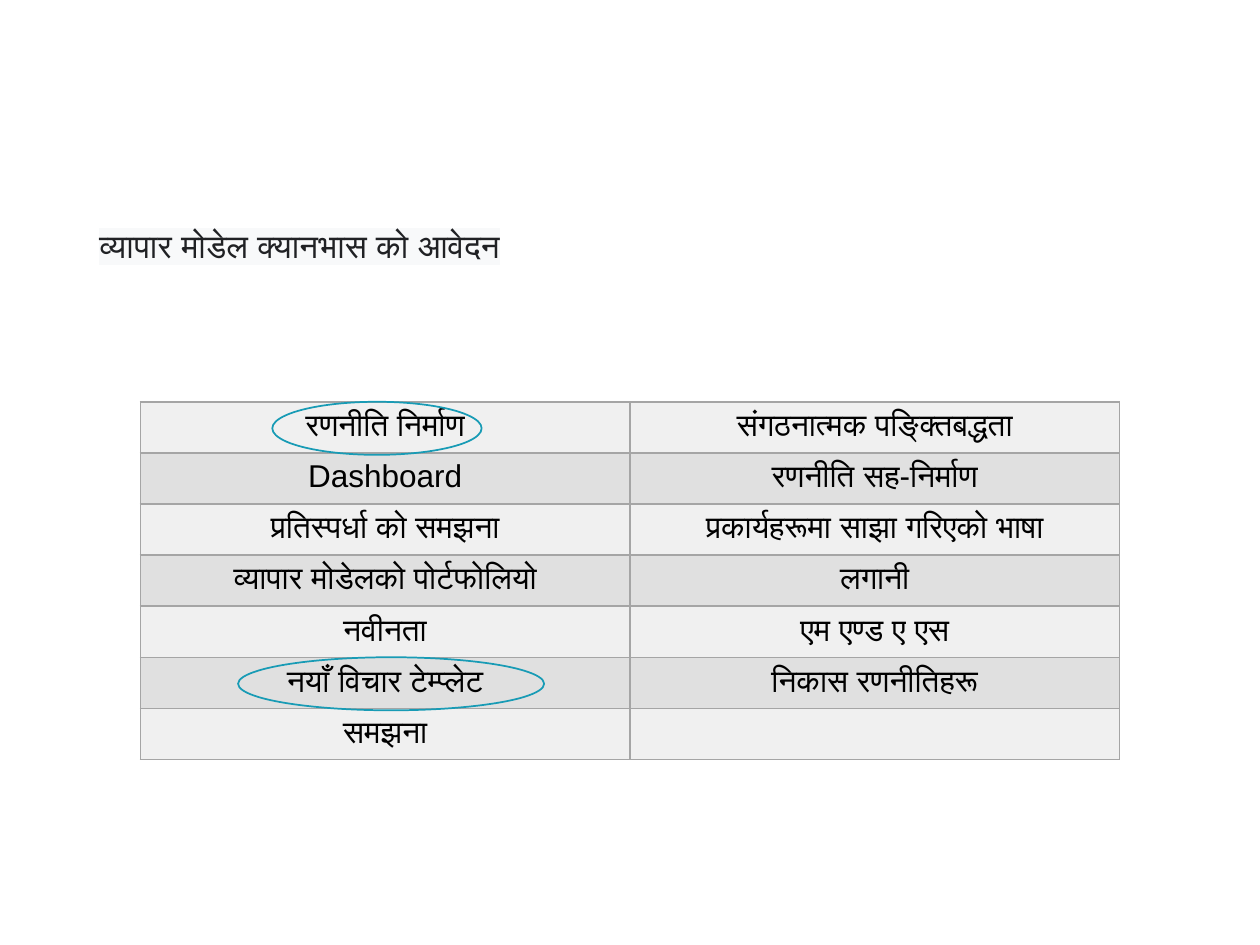
import pptx
import pptx.dml.color
import pptx.enum.shapes
import pptx.enum.text
import pptx.oxml
import pptx.oxml.ns
import pptx.util
from pptx.util import Cm

FONT = "Arial"
NS = pptx.oxml.ns.nsdecls("a")
ROWS = [
    ("रणनीति निर्माण", "संगठनात्मक पङ्क्तिबद्धता"),
    ("Dashboard", "रणनीति सह-निर्माण"),
    ("प्रतिस्पर्धा को समझना", "प्रकार्यहरूमा साझा गरिएको भाषा"),
    ("व्यापार मोडेलको पोर्टफोलियो", "लगानी"),
    ("नवीनता", "एम एण्ड ए एस"),
    ("नयाँ विचार टेम्प्लेट", "निकास रणनीतिहरू"),
    ("समझना", ""),
]
BAND_FILLS = ("F0F0F0", "E0E0E0")
TABLE_TOP = 8.1
ROW_HEIGHT = 1.03
COLUMN_WIDTH = 9.87


def rgb(value):
    return pptx.dml.color.RGBColor.from_string(value)


def add_run(p, text, size, color):
    """Add a run with the same font for Latin and Devanagari letters."""
    r = p.add_run()
    r.text = text
    r.font.size = pptx.util.Pt(size)
    r.font.color.rgb = rgb(color)
    r.font.name = FONT
    latin = r.font._element.find(pptx.oxml.ns.qn("a:latin"))
    latin.addnext(pptx.oxml.parse_xml(f'<a:cs {NS} typeface="{FONT}"/>'))
    return r


def highlight(r, color):
    fill = r.font._element.find(pptx.oxml.ns.qn("a:solidFill"))
    fill.addnext(pptx.oxml.parse_xml(
        f'<a:highlight {NS}><a:srgbClr val="{color}"/></a:highlight>'))


def set_title(slide, text):
    title = slide.shapes.title
    title.left, title.top = Cm(1.75), Cm(4.45)
    title.width, title.height = Cm(21.9), Cm(2.2)
    tf = title.text_frame
    tf.auto_size = pptx.enum.text.MSO_AUTO_SIZE.NONE
    tf.vertical_anchor = pptx.enum.text.MSO_ANCHOR.TOP
    tf.margin_top = Cm(0.09)
    p = tf.paragraphs[0]
    p.alignment = pptx.enum.text.PP_ALIGN.LEFT
    highlight(add_run(p, text, 18.9, "202124"), "F8F9FA")


def set_borders(cell, color, width):
    tc_pr = cell._tc.get_or_add_tcPr()
    for i, side in enumerate("LRTB"):
        tc_pr.insert(i, pptx.oxml.parse_xml(
            f'<a:ln{side} {NS} w="{pptx.util.Pt(width)}"><a:solidFill>'
            f'<a:srgbClr val="{color}"/></a:solidFill></a:ln{side}>'))


def fill_cell(cell, text, fill):
    cell.fill.solid()
    cell.fill.fore_color.rgb = rgb(fill)
    set_borders(cell, "A5A5A5", 1)
    if text:
        p = cell.text_frame.paragraphs[0]
        p.alignment = pptx.enum.text.PP_ALIGN.CENTER
        add_run(p, text, 18, "000000")


def add_uses_table(slide):
    columns = len(ROWS[0])
    table = slide.shapes.add_table(
        len(ROWS), columns, Cm(2.83), Cm(TABLE_TOP),
        Cm(columns * COLUMN_WIDTH), Cm(len(ROWS) * ROW_HEIGHT)).table
    table.first_row = False
    table.horz_banding = False
    for i, texts in enumerate(ROWS):
        for j, text in enumerate(texts):
            fill_cell(table.cell(i, j), text, BAND_FILLS[i % 2])


def add_row_ring(slide, row, left, width):
    """Circle the first-column entry of a table row."""
    sp = slide.shapes.add_shape(
        pptx.enum.shapes.MSO_SHAPE.OVAL, Cm(left),
        Cm(TABLE_TOP + row * ROW_HEIGHT), Cm(width), Cm(1.07))
    sp.shadow.inherit = False
    sp.fill.background()
    sp.line.color.rgb = rgb("189BB5")
    sp.line.width = pptx.util.Pt(1)


def main():
    prs = pptx.Presentation()
    prs.slide_width, prs.slide_height = Cm(25.4), Cm(19.05)
    slide = prs.slides.add_slide(prs.slide_layouts[5])
    set_title(slide, "व्यापार मोडेल क्यानभास को आवेदन")
    add_uses_table(slide)
    add_row_ring(slide, 0, 5.49, 4.22)
    add_row_ring(slide, 5, 4.8, 6.17)
    prs.save("out.pptx")


if __name__ == "__main__":
    main()
